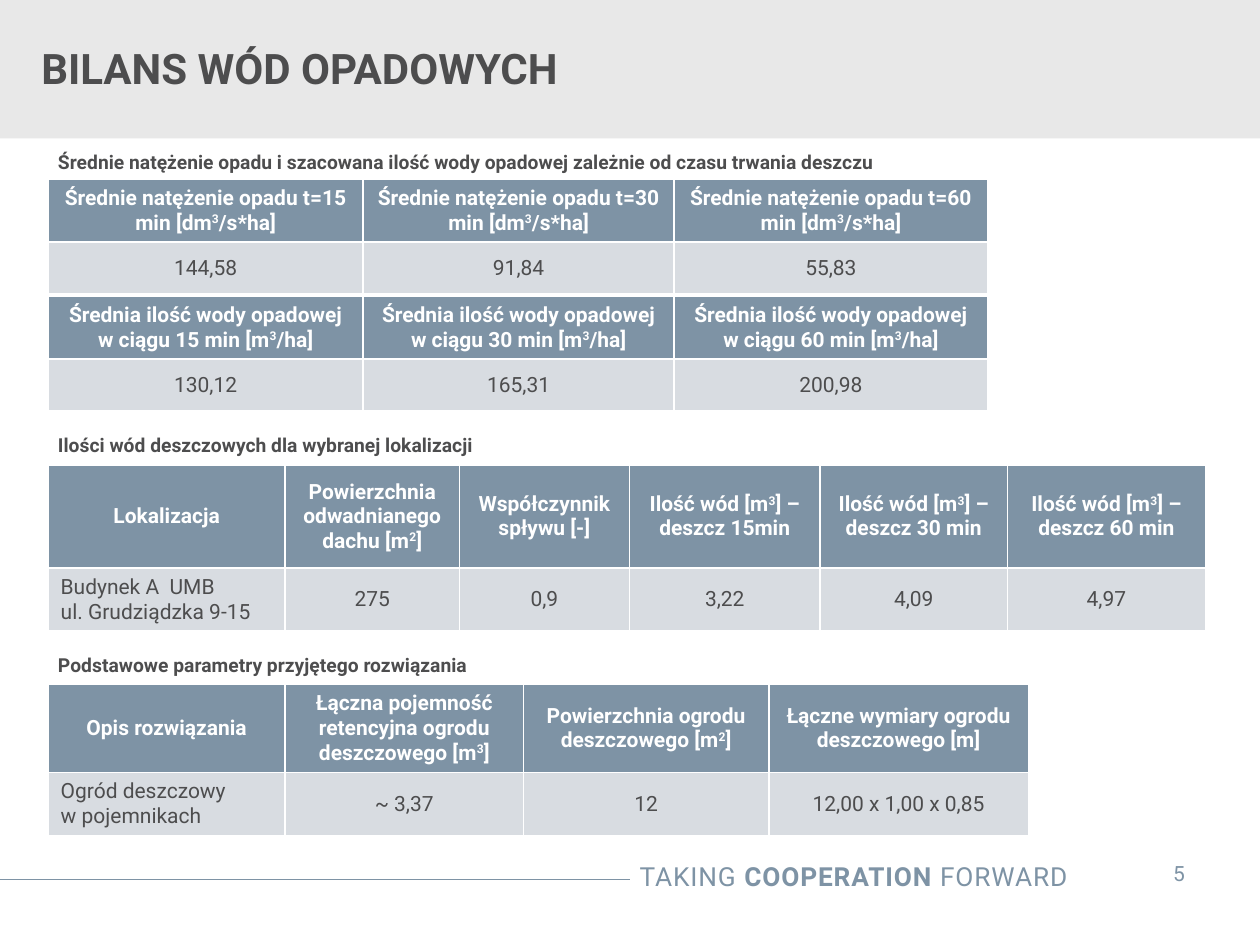
from lxml import etree
from pptx import Presentation
from pptx import util as u
from pptx.dml.color import RGBColor
from pptx.enum import shapes, text
from pptx.oxml import ns

STEEL = RGBColor(0x7E, 0x93, 0xA5)
MIST = RGBColor(0xD8, 0xDC, 0xE1)
BANNER_GREY = RGBColor(0xE8, 0xE8, 0xE8)
INK = RGBColor(0x4D, 0x4D, 0x4E)
WHITE = RGBColor(0xFF, 0xFF, 0xFF)

LEFT, TEXT_ROW, HEADER_ROW, VALUE_ROW = 0.97, 1.24, 1.25, 1.04
RAIN_COLUMNS = (6.35, 6.27, 6.32)
DURATIONS = (15, 30, 60)


def cm(*lengths):
    return [u.Cm(length) for length in lengths]


class BalanceSlide:
    font = "Roboto"

    def __init__(self, slide):
        self.slide = slide
        self.shapes = slide.shapes

    def run(self, paragraph, words, size, color, bold=False):
        run = paragraph.add_run()
        run.text = words
        font = run.font
        font.name, font.size, font.bold = self.font, u.Pt(size), bold
        font.color.rgb = color
        return run

    def rich(self, paragraph, words, size, color, bold=False):
        """Write words, where ^ raises the next character and \\v breaks the line."""
        for number, line in enumerate(words.split("\v")):
            if number:
                paragraph.add_line_break()
            base, caret, rest = line.partition("^")
            self.run(paragraph, base, size, color, bold)
            if caret:
                power = self.run(paragraph, rest[0], size, color, bold)
                power._r.get_or_add_rPr().set("baseline", "30000")
                self.run(paragraph, rest[1:], size, color, bold)

    def banner(self, height):
        band = self.shapes.add_shape(shapes.MSO_SHAPE.RECTANGLE, *cm(0, 0, 25.4, height))
        band.shadow.inherit = False
        band.fill.solid()
        band.fill.fore_color.rgb = BANNER_GREY
        band.line.fill.background()
        self.shapes._spTree.insert(2, band._element)  # behind the title

    def title(self, words):
        title = self.shapes.title
        title.left, title.top, title.width, title.height = cm(-0.03, 0.41, 18.31, 1.9)
        title.text_frame.vertical_anchor = text.MSO_ANCHOR.MIDDLE
        title.text_frame.auto_size = text.MSO_AUTO_SIZE.NONE
        paragraph = title.text_frame.paragraphs[0]
        paragraph.alignment = text.PP_ALIGN.LEFT
        paragraph._p.get_or_add_pPr().set("marL", str(u.Cm(0.61)))
        self.run(paragraph, words, 24, INK, True)

    def rule(self, start, end, y):
        line = self.shapes.add_connector(shapes.MSO_CONNECTOR.STRAIGHT, *cm(start, y, end, y))
        line.line.color.rgb = STEEL
        line.line.width = u.Pt(0.75)
        etree.SubElement(line._element.spPr, ns.qn("a:effectLst"))

    def label(self, box, margins, align, wrap=True):
        """Add an empty text box and return its paragraph."""
        frame = self.shapes.add_textbox(*cm(*box)).text_frame
        frame.word_wrap = wrap
        frame.auto_size = text.MSO_AUTO_SIZE.SHAPE_TO_FIT_TEXT
        frame.margin_left = frame.margin_right = u.Cm(margins[0])
        frame.margin_top = frame.margin_bottom = u.Cm(margins[1])
        paragraph = frame.paragraphs[0]
        paragraph.alignment = align
        return paragraph

    def caption(self, words, top):
        paragraph = self.label((LEFT, top, 23.34, 0.69), (0.2, 0.1), text.PP_ALIGN.LEFT)
        self.run(paragraph, words, 11, INK, True)

    def footer(self, page):
        self.rule(-0.03, 12.7, 17.73)
        slogan = self.label((9.86, 17.22, 11.91, 0.89), (0.25, 0.13), text.PP_ALIGN.RIGHT)
        for words, bold in (("TAKING ", False), ("COOPERATION", True), (" FORWARD", False)):
            run = self.run(slogan, words, 15, STEEL, bold)
            run._r.get_or_add_rPr().set("spc", "50")
        number = self.label((22.83, 17.09, 1.88, 1.02), (0.51, 0.25),
                            text.PP_ALIGN.CENTER, wrap=False)
        self.run(number, page, 12, STEEL)

    def thin_borders(self, cell):
        properties = cell._tc.get_or_add_tcPr()
        for order, side in enumerate(("lnL", "lnR", "lnT", "lnB")):
            border = etree.Element(ns.qn("a:" + side), w=str(u.Pt(1)))
            fill = etree.SubElement(border, ns.qn("a:solidFill"))
            etree.SubElement(fill, ns.qn("a:srgbClr"), val=str(WHITE))
            properties.insert(order, border)

    def cell(self, cell, words, header, align):
        cell.fill.solid()
        cell.fill.fore_color.rgb = STEEL if header else MIST
        cell.vertical_anchor = text.MSO_ANCHOR.MIDDLE
        if not header:
            self.thin_borders(cell)
        frame = cell.text_frame
        for number, line in enumerate(words.split("\n")):
            paragraph = frame.add_paragraph() if number else frame.paragraphs[0]
            paragraph.alignment = align
            self.rich(paragraph, line, 12, WHITE if header else INK, header)

    def table(self, top, widths, heights, headers, values, named=False):
        """Add a header row and a value row; named aligns the first value left."""
        table = self.shapes.add_table(
            2, len(widths), *cm(LEFT, top, sum(widths), sum(heights))).table
        table.horz_banding = False
        for column, width in zip(table.columns, widths):
            column.width = u.Cm(width)
        for row, height in zip(table.rows, heights):
            row.height = u.Cm(height)
        for r, words in enumerate((headers, values)):
            for c, entry in enumerate(words):
                left = named and r == 1 and c == 0
                align = text.PP_ALIGN.LEFT if left else text.PP_ALIGN.CENTER
                self.cell(table.cell(r, c), entry, r == 0, align)


def main():
    deck = Presentation()
    deck.slide_width, deck.slide_height = cm(25.4, 19.05)
    page = BalanceSlide(deck.slides.add_slide(deck.slide_layouts[5]))

    page.banner(2.79)
    page.title("BILANS WÓD OPADOWYCH")
    page.footer("5")

    page.caption("Średnie natężenie opadu i szacowana ilość wody opadowej "
                 "zależnie od czasu trwania deszczu", 2.92)
    page.table(3.61, RAIN_COLUMNS, (HEADER_ROW, VALUE_ROW),
               [f"Średnie natężenie opadu t={t} min [dm^3/s*ha]" for t in DURATIONS],
               ("144,58", "91,84", "55,83"))
    page.table(5.97, RAIN_COLUMNS, (HEADER_ROW, VALUE_ROW),
               [f"Średnia ilość wody opadowej w ciągu {t} min [m^3/ha]" for t in DURATIONS],
               ("130,12", "165,31", "200,98"))

    page.caption("Ilości wód deszczowych dla wybranej lokalizacji", 8.64)
    page.table(9.37, (4.78, 3.51, 3.43, 3.84, 3.78, 3.99), (2.08, TEXT_ROW),
               ("Lokalizacja", "Powierzchnia odwadnianego dachu [m^2]",
                "Współczynnik spływu [-]", "Ilość wód [m^3] – deszcz 15min",
                "Ilość wód [m^3] – deszcz 30 min", "Ilość wód [m^3] – deszcz 60 min"),
               ("Budynek A  UMB\nul. Grudziądzka 9-15", "275", "0,9", "3,22", "4,09", "4,97"),
               named=True)

    page.caption("Podstawowe parametry przyjętego rozwiązania", 13.06)
    page.table(13.79, (4.78, 4.8, 4.95, 5.23), (1.75, TEXT_ROW),
               ("Opis rozwiązania", "Łączna pojemność retencyjna ogrodu deszczowego [m^3]",
                "Powierzchnia ogrodu deszczowego [m^2]",
                "Łączne wymiary ogrodu deszczowego [m]"),
               ("Ogród deszczowy\vw pojemnikach", "~ 3,37", "12", "12,00 x 1,00 x 0,85"),
               named=True)

    deck.save("out.pptx")


if __name__ == "__main__":
    main()
